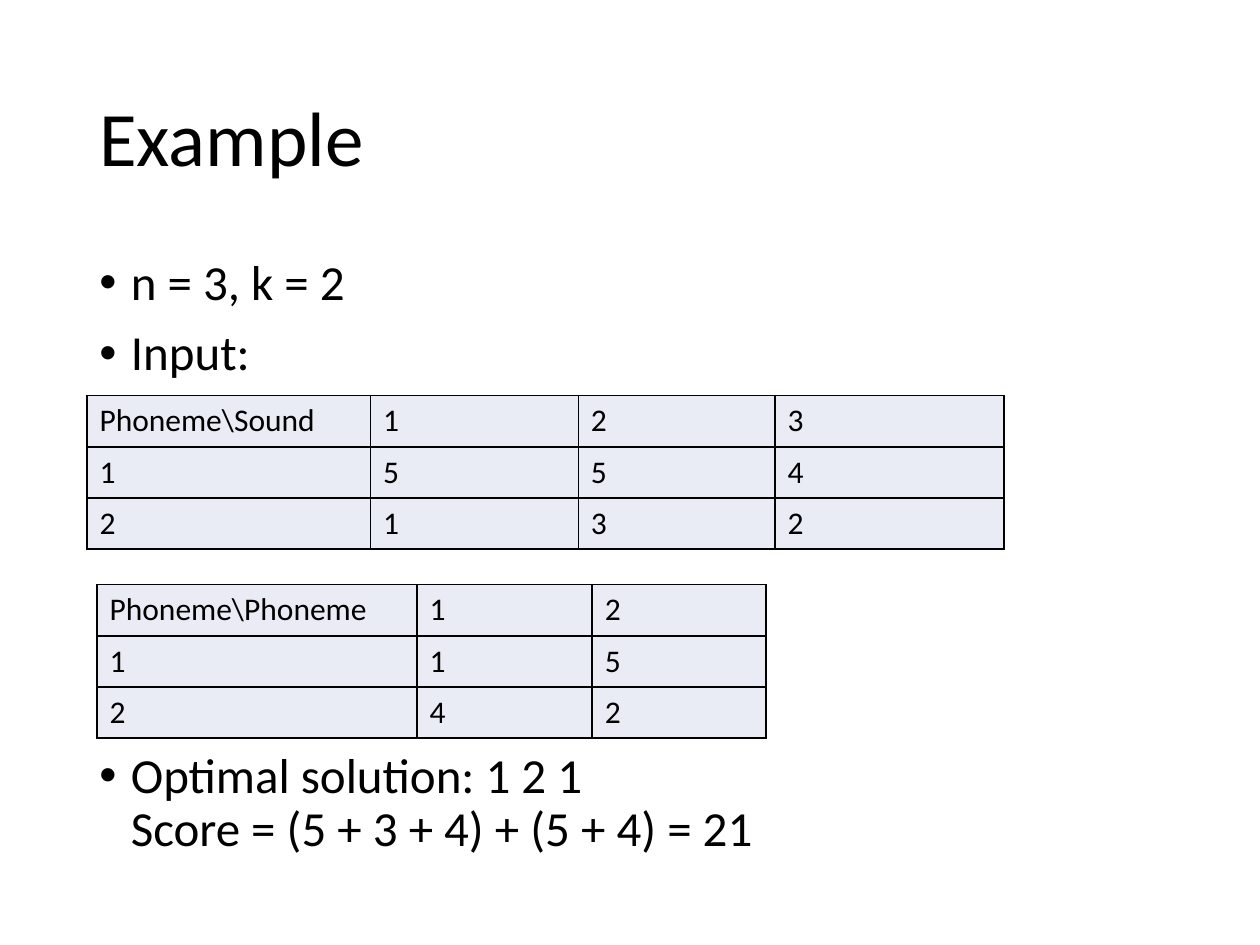
from lxml import etree
from pptx import Presentation
from pptx import util as u
from pptx.dml.color import RGBColor
from pptx.enum import text
from pptx.oxml import ns

COLUMN = ROW = u.Inches(0.1)
GRID_COLUMNS, GRID_ROWS = 100, 75
COLORS = {"ink": "000000", "cell": "E9EBF5", "page": "FFFFFF"}
FONT = "Calibri"
BORDER_WIDTH = u.Pt(1)

TITLE_BOX = (6.9, 4, 86.2, 14.5)
BODY_BOX = (6.9, 20, 86.2, 55)
SOUND_BOX = (6.9, 31.4, 72.8, 12.2)
PHONEME_BOX = (7.7, 46.4, 53.1, 12.2)
TABLES_GAP = 211

BULLETS = [
    ("n = 3, k = 2", 10),
    ("Input:", 10),
    ("Optimal solution: 1 2 1\vScore = (5 + 3 + 4) + (5 + 4) = 21", TABLES_GAP),
]
SOUND_SCORES = [["Phoneme\\Sound", 1, 2, 3], [1, 5, 5, 4], [2, 1, 3, 2]]
PHONEME_SCORES = [["Phoneme\\Phoneme", 1, 2], [1, 1, 5], [2, 4, 2]]


def place(box):
    left, top, width, height = box
    return [int(n) for n in (left * COLUMN, top * ROW, width * COLUMN, height * ROW)]


def apply(target, values):
    for name, value in values.items():
        setattr(target, name, value)


def style_spans(para, size):
    for span in para.runs:
        apply(span.font, {"name": FONT, "size": u.Pt(size), "bold": False})
        span.font.color.rgb = RGBColor.from_string(COLORS["ink"])


def add_frame(page, box, anchor):
    frame = page.shapes.add_textbox(*place(box)).text_frame
    apply(frame, {"word_wrap": True, "vertical_anchor": anchor})
    return frame


def add_title(page, box, words):
    para = add_frame(page, box, text.MSO_ANCHOR.MIDDLE).paragraphs[0]
    apply(para, {"text": words, "line_spacing": 0.9})
    style_spans(para, 44)


def add_bullet(para):
    props = para._p.get_or_add_pPr()
    props.set("marL", str(u.Inches(0.25)))
    props.set("indent", str(-u.Inches(0.25)))
    etree.SubElement(props, ns.qn("a:buFont"), typeface="Arial")
    etree.SubElement(props, ns.qn("a:buChar"), char="•")


def add_body(page, box, bullets):
    frame = add_frame(page, box, text.MSO_ANCHOR.TOP)
    for index, (words, gap) in enumerate(bullets):
        para = frame.add_paragraph() if index else frame.paragraphs[0]
        apply(para, {"text": words, "line_spacing": 0.9, "space_before": u.Pt(gap)})
        add_bullet(para)
        style_spans(para, 28)


def add_borders(cell):
    props = cell._tc.get_or_add_tcPr()
    for index, side in enumerate(("lnL", "lnR", "lnT", "lnB")):
        line = etree.Element(ns.qn(f"a:{side}"), w=str(BORDER_WIDTH))
        fill = etree.SubElement(line, ns.qn("a:solidFill"))
        etree.SubElement(fill, ns.qn("a:srgbClr"), val=COLORS["ink"])
        props.insert(index, line)


def add_scores(page, box, widths, rows):
    table = page.shapes.add_table(len(rows), len(widths), *place(box)).table
    apply(table, {"first_row": False, "horz_banding": False})
    for column, width in zip(table.columns, widths):
        column.width = int(width * COLUMN)
    for row, values in zip(table.rows, rows):
        row.height = int(box[3] * ROW / len(rows))
        for cell, value in zip(row.cells, values):
            cell.text = str(value)
            style_spans(cell.text_frame.paragraphs[0], 18)
            cell.fill.solid()
            cell.fill.fore_color.rgb = RGBColor.from_string(COLORS["cell"])
            add_borders(cell)


def main():
    deck = Presentation()
    apply(deck, {"slide_width": GRID_COLUMNS * COLUMN, "slide_height": GRID_ROWS * ROW})
    page = deck.slides.add_slide(deck.slide_layouts[6])
    page.background.fill.solid()
    page.background.fill.fore_color.rgb = RGBColor.from_string(COLORS["page"])
    add_title(page, TITLE_BOX, "Example")
    add_body(page, BODY_BOX, BULLETS)
    add_scores(page, SOUND_BOX, (22.5, 16.5, 15.6, 18.2), SOUND_SCORES)
    add_scores(page, PHONEME_BOX, (25.4, 13.9, 13.8), PHONEME_SCORES)
    deck.save("out.pptx")


if __name__ == "__main__":
    main()
